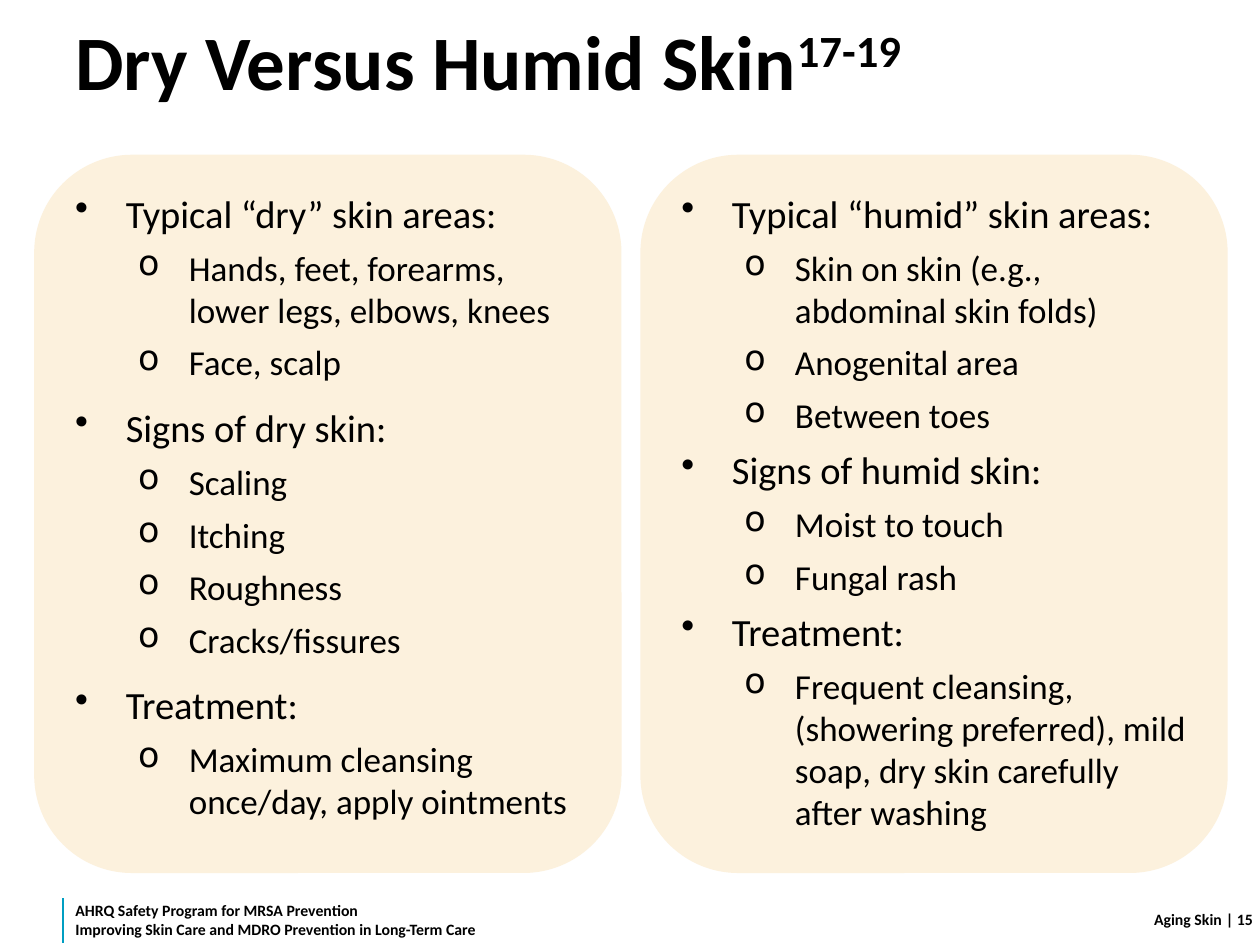
from lxml.etree import SubElement
from pptx import Presentation
from pptx.dml.color import RGBColor
from pptx.enum.shapes import MSO_CONNECTOR, MSO_SHAPE
from pptx.enum.text import MSO_ANCHOR, PP_ALIGN
from pptx.oxml.ns import qn
from pptx.util import Cm, Pt

TITLE, CITES = "Dry Versus Humid Skin", "17-19"
# Each panel: space before a heading (points), then headings with their items
PANELS = [
    (12, [
        ("Typical “dry” skin areas:",
         ["Hands, feet, forearms, lower legs, elbows, knees", "Face, scalp"]),
        ("Signs of dry skin:",
         ["Scaling", "Itching", "Roughness", "Cracks/fissures"]),
        ("Treatment:",
         ["Maximum cleansing once/day, apply ointments"]),
    ]),
    (6, [
        ("Typical “humid” skin areas:",
         ["Skin on skin (e.g., abdominal skin folds)", "Anogenital area",
          "Between toes"]),
        ("Signs of humid skin:",
         ["Moist to touch", "Fungal rash"]),
        ("Treatment:",
         ["Frequent cleansing, (showering preferred), mild soap, "
          "dry skin carefully after washing"]),
    ]),
]
# Footer: text, left, width, left inset, right inset (cm), alignment
FOOTER = [
    ("Aging Skin", 18.03, 6.6, 0.25, 0, PP_ALIGN.RIGHT),
    ("AHRQ Safety Program for MRSA Prevention\n"
     "Improving Skin Care and MDRO Prevention in Long-Term Care",
     1.27, 10.16, 0.25, 0.25, PP_ALIGN.LEFT),
    (" | 15", 24.64, 0.76, 0, 0, PP_ALIGN.LEFT),
]
COLORS = {"text": "000000", "panel": "FCF1DD", "rule": "009EC2"}
LEVELS = [("•", 1.02, 22), ("o", 2.29, 20)]  # bullet, indent (cm), size
HANG = 1.02
LEFT, TOP, WIDTH, HEIGHT, PITCH = 0.69, 3.12, 11.84, 14.48, 12.22


def color(name):
    return RGBColor.from_string(COLORS[name])


def style(para, size, bold=False):
    for run in para.runs:
        font = run.font
        font.name, font.size, font.bold = "Calibri", Pt(size), bold
        font.color.rgb = color("text")


def add_box(slide, left, top, width, height, pads):
    """Add a wrapping, middle-anchored text box; pads are l, t, r, b in cm."""
    box = slide.shapes.add_textbox(Cm(left), Cm(top), Cm(width), Cm(height))
    frame = box.text_frame
    frame.word_wrap = True
    frame.vertical_anchor = MSO_ANCHOR.MIDDLE
    (frame.margin_left, frame.margin_top,
     frame.margin_right, frame.margin_bottom) = map(Cm, pads)
    return frame


def add_title(slide):
    frame = add_box(slide, 1.27, 0, 22.86, 2.54, (0.25, 0.25, 0.25, 0.13))
    para = frame.paragraphs[0]
    para.text = TITLE
    para.line_spacing = 0.9
    cite = para.add_run()
    cite.text = CITES
    style(para, 44, True)
    cite.font._element.set("baseline", "30000")


def set_bullet(para, level):
    mark, indent, size = LEVELS[level]
    props = para._p.get_or_add_pPr()
    props.set("marL", str(Cm(indent)))
    props.set("indent", str(-Cm(HANG)))
    SubElement(props, qn("a:buChar")).set("char", mark)
    para.level = level
    para.alignment = PP_ALIGN.LEFT
    style(para, size)


def add_panel(slide, left, gap, groups):
    panel = slide.shapes.add_shape(MSO_SHAPE.ROUNDED_RECTANGLE, Cm(left),
                                   Cm(TOP), Cm(WIDTH), Cm(HEIGHT))
    panel.shadow.inherit = False
    panel.fill.solid()
    panel.fill.fore_color.rgb = color("panel")
    panel.line.fill.background()
    frame = panel.text_frame
    frame.word_wrap = True
    frame.vertical_anchor = MSO_ANCHOR.TOP
    frame.margin_right = Cm(0.2)
    rows = [row for head, items in groups
            for row in [(head, 0), *((item, 1) for item in items)]]
    frame.text = "\n".join(text for text, level in rows)
    for i, (para, (text, level)) in enumerate(zip(frame.paragraphs, rows)):
        if i:
            para.space_before = Pt(6 if level else gap)
        set_bullet(para, level)


def add_footer(slide):
    rule = slide.shapes.add_connector(MSO_CONNECTOR.STRAIGHT, Cm(1.27),
                                      Cm(18.11), Cm(1.27), Cm(19))
    rule.line.color.rgb = color("rule")
    rule.line.width = Pt(1)
    SubElement(rule._element.spPr, qn("a:effectLst"))
    for text, left, width, start, end, align in FOOTER:
        frame = add_box(slide, left, 18.03, width, 1.02, (start, 0, end, 0))
        frame.text = text
        for para in frame.paragraphs:
            para.alignment = align
            style(para, 9, True)


def main():
    deck = Presentation()
    deck.slide_width, deck.slide_height = Cm(25.4), Cm(19.05)
    slide = deck.slides.add_slide(deck.slide_layouts[6])
    add_title(slide)
    for i, (gap, groups) in enumerate(PANELS):
        add_panel(slide, LEFT + i * PITCH, gap, groups)
    add_footer(slide)
    deck.save("out.pptx")


if __name__ == "__main__":
    main()
